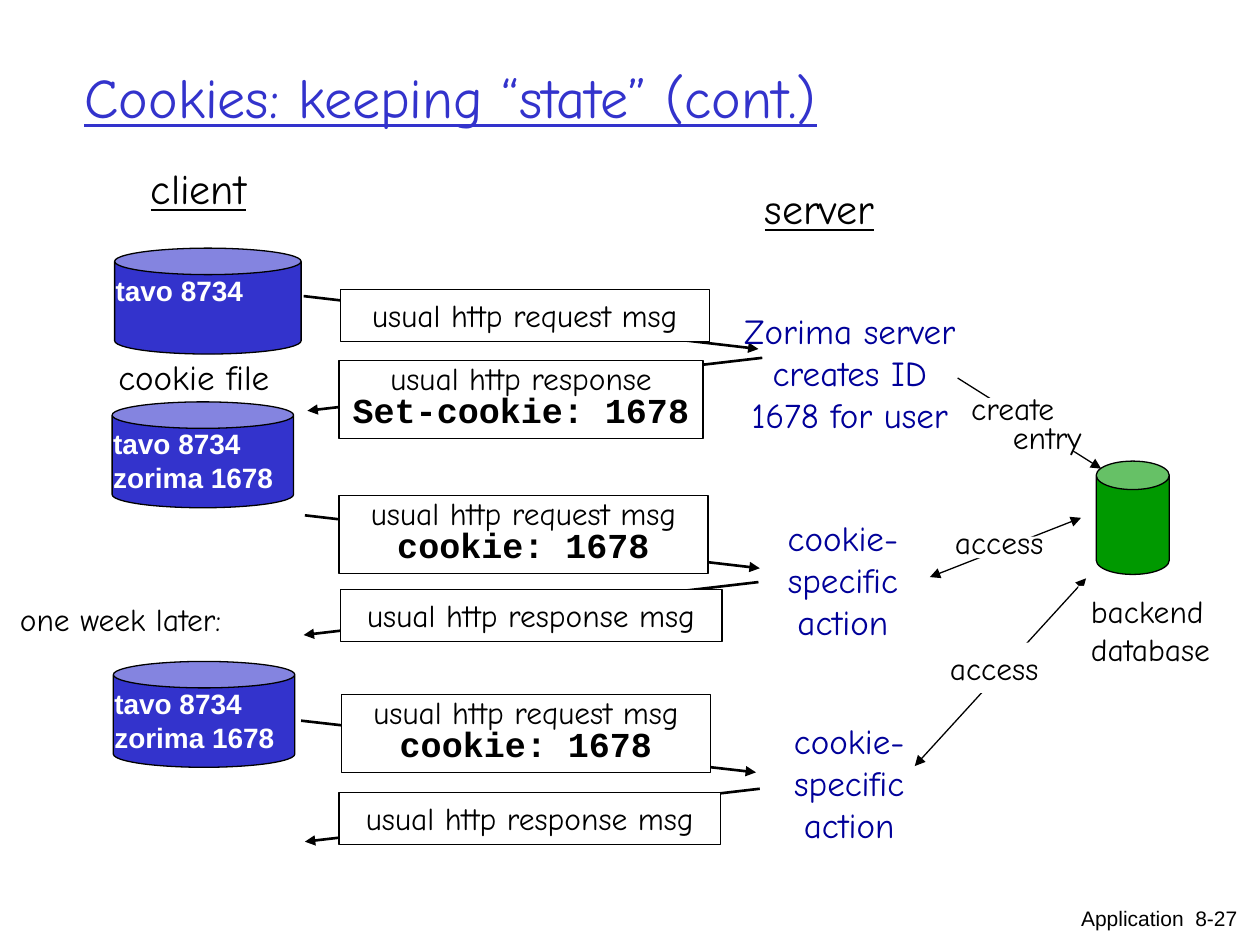
from pptx import Presentation
from pptx.dml.color import RGBColor
from pptx.enum import shapes, text
from pptx.oxml.ns import qn
from pptx.util import Inches, Pt
from lxml import etree

HEX = {"title": "3333CC", "ink": "000000", "note": "000099", "jar": "3333CC",
       "data": "009900", "white": "FFFFFF"}
# style: size, font, colour, bold, underline
STYLE = {
    "title": (32, "Comic Neue", "title", False, True),
    "head": (24, "Comic Neue", "ink", False, True),
    "label": (20, "Comic Neue", "ink", False, False),
    "note": (20, "Comic Neue", "note", False, False),
    "msg": (18, "Comic Neue", "ink", False, False),
    "code": (20, "Courier New", "ink", True, False),
    "jar": (16, "Arial", "white", True, False),
    "foot": (12, "Arial", "ink", False, False),
}
KIND = shapes.MSO_SHAPE
LEFT, MID, RIGHT = text.PP_ALIGN.LEFT, text.PP_ALIGN.CENTER, text.PP_ALIGN.RIGHT

deck = Presentation()
deck.slide_width, deck.slide_height = Inches(10), Inches(7.5)
slide = deck.slides.add_slide(deck.slide_layouts[5])


def write(shape, lines, align=LEFT, gap=None):
    """Fill a shape with (text, style) lines."""
    frame = shape.text_frame
    frame.word_wrap = True
    frame.vertical_anchor = text.MSO_ANCHOR.TOP
    for i, (words, style) in enumerate(lines):
        para = frame.paragraphs[0] if i == 0 else frame.add_paragraph()
        para.alignment = align
        if gap:
            para.line_spacing = gap
        run = para.add_run()
        run.text = words
        size, face, tone, bold, under = STYLE[style]
        font = run.font
        font.size, font.name, font.bold, font.underline = Pt(size), face, bold, under
        font.color.rgb = RGBColor.from_string(HEX[tone])


def draw(kind, spot, fill, edge=True):
    """Add a filled preset shape, with or without a thin black edge."""
    shape = slide.shapes.add_shape(kind, *map(Inches, spot))
    shape.shadow.inherit = False
    shape.fill.solid()
    shape.fill.fore_color.rgb = RGBColor.from_string(HEX[fill])
    if edge:
        shape.line.color.rgb = RGBColor.from_string(HEX["ink"])
        shape.line.width = Pt(0.75)
    else:
        shape.line.fill.background()
    return shape


# Title
title = slide.shapes.title
title.left, title.top, title.width, title.height = map(Inches, (0.57, 0.14, 8.5, 1.25))
write(title, [("Cookies: keeping “state” (cont.)", "title")])
title.text_frame.vertical_anchor = text.MSO_ANCHOR.MIDDLE

# Arrows: start, end, width, arrowheads
arrows = [
    (2.41, 2.35, 6.02, 2.77, 1.5, ["tailEnd"]),
    (6.05, 2.84, 2.44, 3.26, 1.5, ["tailEnd"]),
    (2.42, 4.09, 6.03, 4.51, 1.5, ["tailEnd"]),
    (6.02, 4.62, 2.41, 5.04, 1.5, ["tailEnd"]),
    (2.39, 5.72, 6, 6.13, 1.5, ["tailEnd"]),
    (6.03, 6.26, 2.42, 6.68, 1.5, ["tailEnd"]),
    (7.6, 3, 8.74, 3.72, 0.75, ["tailEnd"]),
    (7.38, 4.58, 8.58, 4.11, 0.75, ["headEnd", "tailEnd"]),
    (7.26, 6.08, 8.62, 4.59, 0.75, ["headEnd", "tailEnd"]),
]
for *ends, width, tips in arrows:
    arrow = slide.shapes.add_connector(shapes.MSO_CONNECTOR.STRAIGHT, *map(Inches, ends))
    arrow.line.color.rgb = RGBColor.from_string(HEX["ink"])
    arrow.line.width = Pt(width)
    line = arrow.line._get_or_add_ln()
    for tip in tips:
        etree.SubElement(line, qn("a:" + tip), type="triangle")
    etree.SubElement(arrow._element.spPr, qn("a:effectLst"))

# White patches behind the arrow labels
for spot in [(7.65, 4.26, 0.67, 0.17), (7.76, 3.16, 1.05, 0.42)]:
    draw(KIND.RECTANGLE, spot, "white", edge=False)

# Messages between client and server
ask, reply = ("usual http request msg", "msg"), ("usual http response msg", "msg")
cookie = ("cookie: 1678", "code")
msgs = [
    (2.7, 2.3, 2.93, [ask]),
    (2.69, 2.86, 2.89, [("usual http response", "msg"), ("Set-cookie: 1678", "code")]),
    (2.69, 3.93, 2.93, [ask, cookie]),
    (2.7, 4.68, 3.03, [reply]),
    (2.71, 5.51, 2.93, [ask, cookie]),
    (2.69, 6.29, 3.03, [reply]),
]
for x, y, width, lines in msgs:
    double = len(lines) > 1
    box = draw(KIND.RECTANGLE, (x, y, width, 0.62 if double else 0.41), "white")
    write(box, lines, MID, 0.8 if double else None)

# Cookie files and backend database
old, new = ("tavo 8734", "jar"), ("zorima 1678", "jar")
jars = [(0.91, 1.97, 1.48, [old]), (0.89, 3.19, 1.44, [old, new]),
        (0.9, 5.25, 1.44, [old, new])]
for x, y, width, lines in jars:
    draw(KIND.CAN, (x, y, width, 0.84), "jar").adjustments[0] = 0.25
    area = (x - 0.09, y + 0.15, 1.74, 0.64)
    write(slide.shapes.add_textbox(*map(Inches, area)), lines)
draw(KIND.CAN, (8.7, 3.66, 0.58, 0.9), "data").adjustments[0] = 0.39

# Labels on white
for spot, lines in [((7.44, 5.1, 0.97, 0.4), ["access"]),
                    ((8.56, 4.65, 1.26, 0.7), ["backend", "database"])]:
    box = draw(KIND.RECTANGLE, spot, "white", edge=False)
    write(box, [(words, "msg") for words in lines])

# Plain labels
action = ["cookie-", "specific", "action"]
labels = [
    ((1.04, 1.24, 1.07, 0.5), ["client"], "head", MID),
    ((5.9, 1.4, 1.21, 0.5), ["server"], "head", MID),
    ((0.84, 2.77, 1.95, 0.43), ["cookie file"], "label", LEFT),
    ((0.06, 4.71, 1.98, 0.4), ["one week later:"], "msg", LEFT),
    ((5.68, 2.41, 2.13, 1.1), ["Zorima server", "creates ID", "1678 for user"], "note", MID),
    ((6.08, 4.05, 1.22, 1.1), action, "note", MID),
    ((6.13, 5.66, 1.22, 1.1), action, "note", MID),
    ((7.48, 4.1, 0.97, 0.4), ["access"], "msg", LEFT),
    ((8.33, 7.14, 1.59, 0.31), ["Application  8-27"], "foot", RIGHT),
]
for spot, lines, style, align in labels:
    area = slide.shapes.add_textbox(*map(Inches, spot))
    write(area, [(words, style) for words in lines], align)

# Two-line arrow label, second line indented
area = slide.shapes.add_textbox(*map(Inches, (7.61, 3.11, 1.28, 0.55)))
write(area, [("create", "msg"), ("entry", "msg")], gap=0.75)
area.text_frame.paragraphs[1]._p.get_or_add_pPr().set("marL", str(Inches(0.33)))

deck.save("out.pptx")
